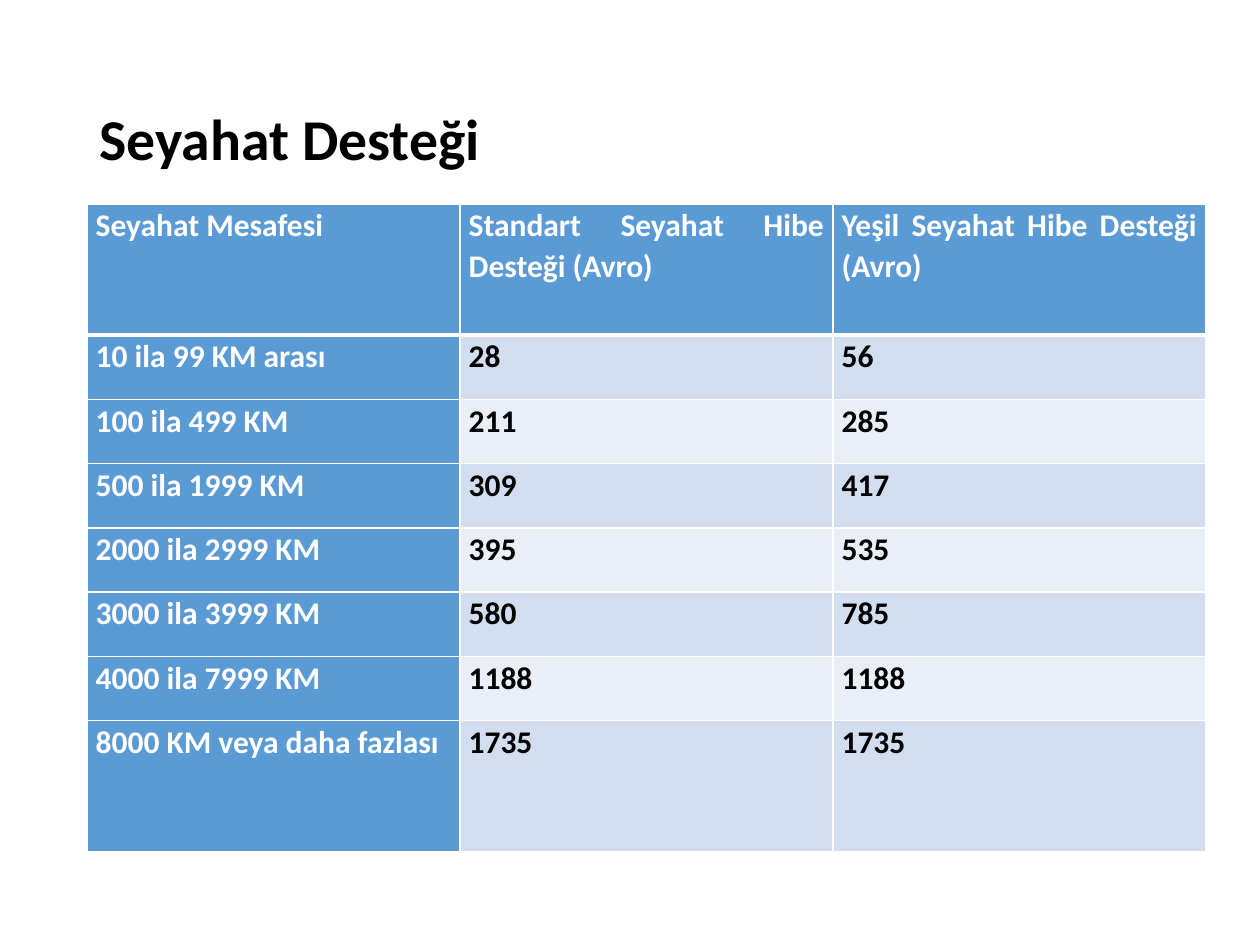
from lxml import etree
from pptx import Presentation, util as u
from pptx.dml.color import RGBColor
from pptx.enum import text
from pptx.oxml.ns import qn

W, H = 10, 7.5
LEFT = 0.069 * W
WHITE, BLACK, BLUE = "FFFFFF", "000000", "5B9BD5"
BANDS = ("D2DEEF", "EAEFF7")
COL_W = 2.96
ROW_H, TALL_ROW_H = 0.51, 1.04
ROWS = [
    ("Seyahat Mesafesi", "Standart Seyahat Hibe Desteği (Avro)", "Yeşil Seyahat Hibe Desteği (Avro)"),
    ("10 ila 99 KM arası", "28", "56"),
    ("100 ila 499 KM", "211", "285"),
    ("500 ila 1999 KM", "309", "417"),
    ("2000 ila 2999 KM", "395", "535"),
    ("3000 ila 3999 KM", "580", "785"),
    ("4000 ila 7999 KM", "1188", "1188"),
    ("8000 KM veya daha fazlası", "1735", "1735"),
]


def rgb(value):
    """Turn a hex string into a colour."""
    return RGBColor.from_string(value)


def set_attrs(obj, values):
    """Set each named attribute of an object."""
    for name, value in values.items():
        setattr(obj, name, value)


def write(tf, words, size, color, **para):
    """Write one bold paragraph into a text frame."""
    p = tf.paragraphs[0]
    set_attrs(p, para)
    r = p.add_run()
    r.text = words
    set_attrs(r.font, {"name": "Calibri", "size": u.Pt(size), "bold": True})
    r.font.color.rgb = rgb(color)


def add_title(s, words):
    """Add the slide heading."""
    sp = s.shapes.add_textbox(*map(u.Inches, (LEFT, 0.4, 8.62, 1.45)))
    set_attrs(sp.text_frame, {"word_wrap": True, "vertical_anchor": text.MSO_ANCHOR.MIDDLE})
    write(sp.text_frame, words, 33, BLACK, line_spacing=0.9)


def add_borders(cell, widths):
    """Draw white borders, given widths in points by side."""
    pr = cell._tc.get_or_add_tcPr()
    for side, width in widths.items():
        ln = etree.SubElement(pr, qn(f"a:ln{side}"), w=str(u.Pt(width)))
        fill = etree.SubElement(ln, qn("a:solidFill"))
        etree.SubElement(fill, qn("a:srgbClr"), val=WHITE)


def format_cell(cell, words, row, col):
    """Fill, frame and write one table cell."""
    heading = row == 0 or col == 0
    set_attrs(cell, {"margin_left": u.Inches(0.07), "margin_right": u.Inches(0.07),
                     "margin_top": 0, "margin_bottom": 0})
    add_borders(cell, {"L": 1, "R": 1, "T": 3 if row == 1 else 1, "B": 3 if row == 0 else 1})
    cell.fill.solid()
    cell.fill.fore_color.rgb = rgb(BLUE if heading else BANDS[(row - 1) % 2])
    write(cell.text_frame, words, 18, WHITE if heading else BLACK,
          alignment=text.PP_ALIGN.JUSTIFY, line_spacing=1.07)


def add_grant_table(s, rows):
    """Add the travel grant table with tall first and last rows."""
    n, m = len(rows), len(rows[0])
    heights = [TALL_ROW_H] + [ROW_H] * (n - 2) + [TALL_ROW_H]
    box = (LEFT, 1.62, COL_W * m, sum(heights))
    table = s.shapes.add_table(n, m, *map(u.Inches, box)).table
    table.first_col = True
    for column in table.columns:
        column.width = u.Inches(COL_W)
    for i, row in enumerate(rows):
        table.rows[i].height = u.Inches(heights[i])
        for j, words in enumerate(row):
            format_cell(table.cell(i, j), words, i, j)


def main():
    """Build and save the slide."""
    prs = Presentation()
    set_attrs(prs, {"slide_width": u.Inches(W), "slide_height": u.Inches(H)})
    s = prs.slides.add_slide(prs.slide_layouts[6])
    add_title(s, "Seyahat Desteği")
    add_grant_table(s, ROWS)
    prs.save("out.pptx")


if __name__ == "__main__":
    main()
